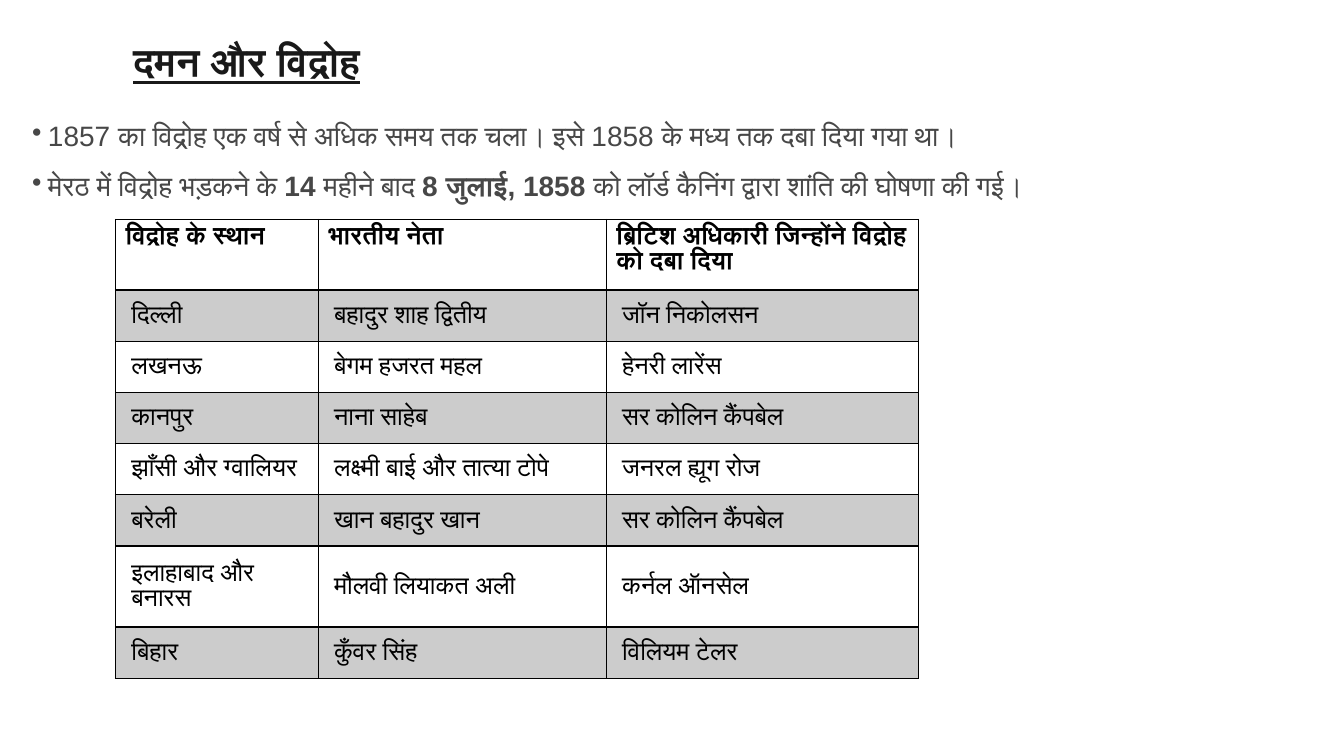
from lxml import etree
from pptx import Presentation
from pptx.dml.color import RGBColor
from pptx.enum import text as t
from pptx.oxml import ns
from pptx.util import Cm, Pt

TITLE = "दमन और विद्रोह"
# Each point is a list of (words, bold)
POINTS = [
    [("1857 का विद्रोह एक वर्ष से अधिक समय तक चला। इसे 1858 के मध्य तक दबा दिया गया था।", False)],
    [
        ("मेरठ में विद्रोह भड़कने के ", False),
        ("14 ", True),
        ("महीने बाद ", False),
        ("8 जुलाई, 1858 ", True),
        ("को लॉर्ड कैनिंग द्वारा शांति की घोषणा की गई।", False),
    ],
]
LEADERS = [
    ("विद्रोह के स्थान", "भारतीय नेता", "ब्रिटिश अधिकारी जिन्होंने विद्रोह को दबा दिया"),
    ("दिल्ली", "बहादुर शाह द्वितीय", "जॉन निकोलसन"),
    ("लखनऊ", "बेगम हजरत महल", "हेनरी लारेंस"),
    ("कानपुर", "नाना साहेब", "सर कोलिन कैंपबेल"),
    ("झाँसी और ग्वालियर", "लक्ष्मी बाई और तात्या टोपे", "जनरल ह्यूग रोज"),
    ("बरेली", "खान बहादुर खान", "सर कोलिन कैंपबेल"),
    ("इलाहाबाद और बनारस", "मौलवी लियाकत अली", "कर्नल ऑनसेल"),
    ("बिहार", "कुँवर सिंह", "विलियम टेलर"),
]
COLUMN_WIDTHS = [5.11, 7.26, 7.86]
ROW_HEIGHT = 1.29
TALL_ROWS = {0: 1.78, 6: 2.04}

TITLE_COLOR = RGBColor(0x19, 0x19, 0x19)
POINT_COLOR = RGBColor(0x47, 0x47, 0x47)
BLACK = RGBColor(0, 0, 0)


def style(run, font, size, color, bold):
    run.font.name = font
    run.font.size = Pt(size)
    run.font.color.rgb = color
    run.font.bold = bold


def add_bullet(paragraph, indent):
    properties = paragraph._p.get_or_add_pPr()
    properties.set("marL", str(indent))
    properties.set("indent", str(-indent))
    etree.SubElement(properties, ns.qn("a:buChar")).set("char", "•")


def add_borders(cell, bottom_width):
    """Draw black lines round a cell, 1 pt except at the bottom."""
    properties = cell._tc.get_or_add_tcPr()
    for side, width in (("L", 1), ("R", 1), ("T", 1), ("B", bottom_width)):
        line = etree.SubElement(properties, ns.qn("a:ln" + side), w=str(Pt(width)))
        fill = etree.SubElement(line, ns.qn("a:solidFill"))
        etree.SubElement(fill, ns.qn("a:srgbClr"), val=str(BLACK))


def shade(cell, percent):
    cell.fill.solid()
    cell.fill.fore_color.rgb = BLACK
    color = cell._tc.tcPr.find(".//" + ns.qn("a:solidFill") + "[last()]")
    color = cell._tc.tcPr.find(ns.qn("a:solidFill")).find(ns.qn("a:srgbClr"))
    etree.SubElement(color, ns.qn("a:alpha"), val=str(percent * 1000))


def add_title(slide):
    title = slide.shapes.title
    title.left, title.top, title.width, title.height = Cm(3.1), Cm(0.81), Cm(20), Cm(1.45)
    frame = title.text_frame
    frame.text = TITLE
    frame.auto_size = t.MSO_AUTO_SIZE.NONE
    frame.vertical_anchor = t.MSO_ANCHOR.TOP
    frame.paragraphs[0].alignment = t.PP_ALIGN.LEFT
    run = frame.paragraphs[0].runs[0]
    style(run, "Arial", 28, TITLE_COLOR, True)
    run.font.underline = True


def add_points(slide):
    frame = slide.shapes.add_textbox(Cm(0.56), Cm(2.44), Cm(33), Cm(2.6)).text_frame
    frame.word_wrap = True
    for number, point in enumerate(POINTS):
        paragraph = frame.add_paragraph() if number else frame.paragraphs[0]
        paragraph.alignment = t.PP_ALIGN.JUSTIFY
        paragraph.line_spacing = 1.5
        add_bullet(paragraph, Cm(0.4))
        for words, bold in point:
            run = paragraph.add_run()
            run.text = words
            style(run, "Arial", 20, POINT_COLOR, bold)


def add_leaders(slide):
    heights = [TALL_ROWS.get(row, ROW_HEIGHT) for row in range(len(LEADERS))]
    table = slide.shapes.add_table(
        len(LEADERS), len(COLUMN_WIDTHS), Cm(2.91), Cm(5.53),
        Cm(sum(COLUMN_WIDTHS)), Cm(sum(heights)),
    ).table
    table.first_row = table.horz_banding = False
    for column, width in zip(table.columns, COLUMN_WIDTHS):
        column.width = Cm(width)
    for row, (height, entries) in enumerate(zip(heights, LEADERS)):
        table.rows[row].height = Cm(height)
        header = row == 0
        for column, entry in enumerate(entries):
            cell = table.cell(row, column)
            cell.text_frame.text = entry
            style(cell.text_frame.paragraphs[0].runs[0], "Calibri", 18, BLACK, header)
            if not header:
                cell.vertical_anchor = t.MSO_ANCHOR.MIDDLE
                cell.margin_left = cell.margin_right = Cm(0.4)
                cell.margin_top = cell.margin_bottom = Cm(0.25)
            add_borders(cell, 2 if header else 1)
            if row % 2:
                shade(cell, 20)
            else:
                cell.fill.background()


def main():
    deck = Presentation()
    deck.slide_width, deck.slide_height = Cm(33.87), Cm(19.05)
    slide = deck.slides.add_slide(deck.slide_layouts[5])
    add_title(slide)
    add_points(slide)
    add_leaders(slide)
    deck.save("out.pptx")


if __name__ == "__main__":
    main()
